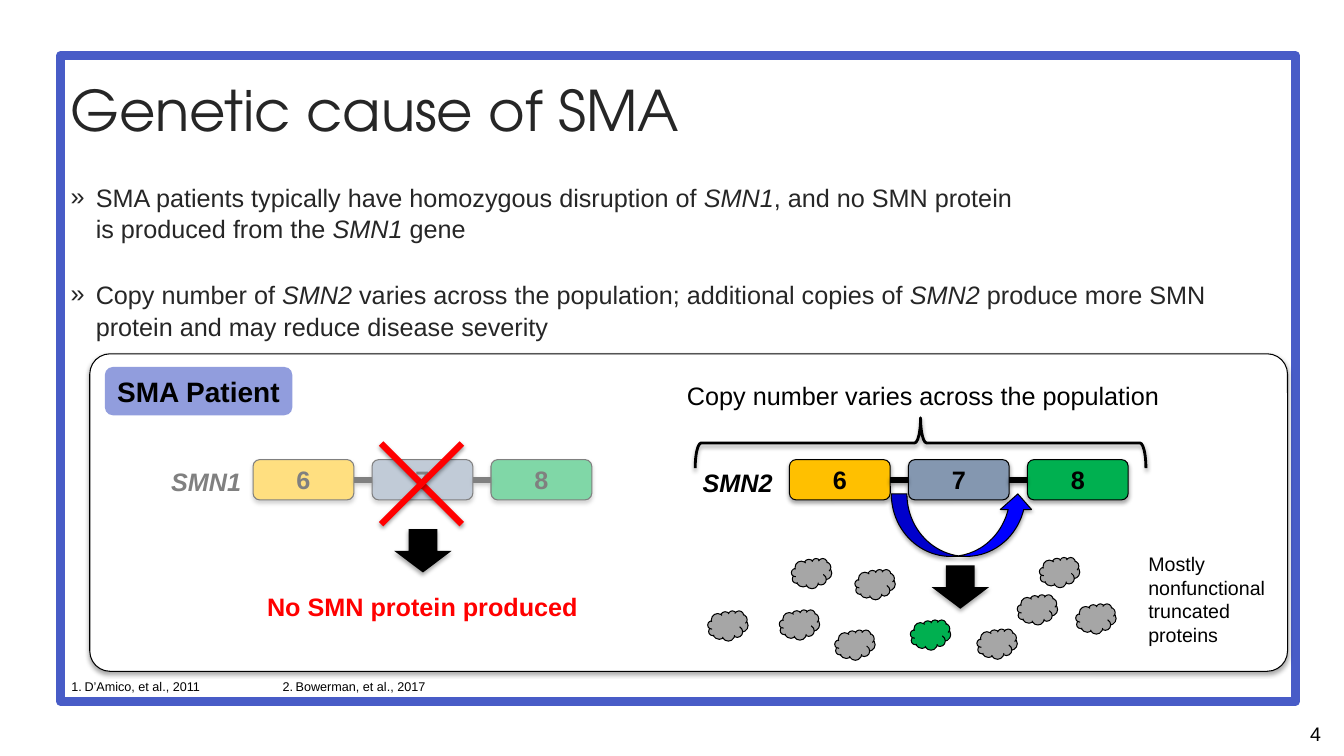
from dataclasses import dataclass

from pptx import Presentation
from pptx.dml.color import RGBColor
from pptx.enum.shapes import MSO_CONNECTOR, MSO_SHAPE as Preset
from pptx.enum.text import MSO_ANCHOR as Anchor, MSO_AUTO_SIZE as AutoSize, PP_ALIGN as Align
from pptx.oxml.ns import qn
from pptx.oxml.xmlchemy import OxmlElement
from pptx.util import Inches, Pt

TITLE = "Genetic cause of SMA"
# Asterisks enclose italic words.
BULLETS = [
    "SMA patients typically have homozygous disruption of *SMN1*, and no SMN protein \n"
    "is produced from the *SMN1* gene",
    "Copy number of *SMN2 *varies across the population; additional copies of *SMN2* "
    "produce more SMN protein and may reduce disease severity",
]
REFERENCES = ["D’Amico, et al., 2011", "Bowerman, et al., 2017"]
PAGE_NUMBER = "4"
PATIENT = "SMA Patient"
COPY_NUMBER = "Copy number varies across the population"
NO_PROTEIN = "No SMN protein produced"
TRUNCATED = "Mostly \nnonfunctional truncated proteins"
EXONS = [("6", "FFC000"), ("7", "8497B0"), ("8", "00B050")]
# Gene name, label position, left edge of the first exon
GENES = [("SMN1", (1.6, 4.58), 2.51), ("SMN2", (6.87, 4.59), 7.83)]
DOWN_ARROWS = [(3.91, 5.25), (9.24, 5.61)]
TRUNCATED_PROTEINS = [
    (7.02, 6.06), (8.48, 5.65), (10.09, 5.9), (10.31, 5.53), (9.69, 6.24),
    (10.67, 5.99), (7.73, 6.05), (8.28, 6.25), (7.85, 5.54),
]
FULL_PROTEIN = (9.03, 6.15)
EXON_TOP, EXON_WIDTH, EXON_HEIGHT, EXON_STEP = 4.56, 1, 0.4, 1.18
CROSS_LEFT, CROSS_TOP, CROSS_SIZE = 3.78, 4.4, 0.8


@dataclass(frozen=True)
class Theme:
    body_font: str = "Arial"
    title_font: str = "TeX Gyre Adventor"
    ink: str = "262626"
    black: str = "000000"
    white: str = "FFFFFF"
    frame: str = "485CC7"
    badge: str = "919DDD"
    alert: str = "FF0000"
    splice: str = "0000FF"
    truncated: str = "A6A6A6"
    full: str = "00B050"
    title_size: int = 40
    badge_size: int = 20
    text_size: int = 18
    small_size: int = 14
    reference_size: int = 9


THEME = Theme()


def color(code):
    return RGBColor.from_string(code)


def element(parent, tag, **attributes):
    child = OxmlElement(tag)
    for name, value in attributes.items():
        child.set(name, str(value))
    parent.append(child)
    return child


def style(paragraph, size=THEME.text_size, tint=THEME.black, font=THEME.body_font, bold=None):
    for span in paragraph.runs:
        span.font.name, span.font.size, span.font.bold = font, Pt(size), bold
        span.font.color.rgb = color(tint)


def add_shadow(item, alpha=35, distance=1.8):
    properties = item._element.spPr
    effects = properties.find(qn("a:effectLst"))
    if effects is None:
        effects = element(properties, "a:effectLst")
    outer = element(effects, "a:outerShdw", blurRad=Pt(3.1), dist=Pt(distance),
                    dir=90 * 60000, algn="ctr", rotWithShape=0)
    shade = element(outer, "a:srgbClr", val=THEME.black)
    element(shade, "a:alpha", val=alpha * 1000)


def add_shape(page, preset, at, fill=None, line=None, width=0.75, shadow=False, opacity=None):
    shape = page.shapes.add_shape(preset, *map(Inches, at))
    if fill:
        shape.fill.solid()
        shape.fill.fore_color.rgb = color(fill)
        if opacity:
            element(shape.fill._xPr.find(".//" + qn("a:srgbClr")), "a:alpha", val=opacity * 1000)
    else:
        shape.fill.background()
    if line:
        shape.line.color.rgb = color(line)
        shape.line.width = Pt(width)
    else:
        shape.line.fill.background()
    shape.shadow.inherit = False
    if shadow:
        add_shadow(shape)
    return shape


def add_text(page, at, text, wrap=False, align=Align.LEFT, **look):
    box = page.shapes.add_textbox(*map(Inches, at))
    box.text_frame.word_wrap = wrap
    box.text_frame.text = text.replace("\n", "\v")
    for para in box.text_frame.paragraphs:
        para.alignment = align
        style(para, **look)
    return box


def add_line(page, start, end, tint):
    line = page.shapes.add_connector(MSO_CONNECTOR.STRAIGHT, *map(Inches, start + end))
    line.line.color.rgb = color(tint)
    line.line.width = Pt(4.5)
    add_shadow(line, 38, 1.6)
    return line


def label_shape(shape, text, align, size=THEME.text_size):
    frame = shape.text_frame
    frame.word_wrap = False
    frame.vertical_anchor = Anchor.MIDDLE
    frame.text = text
    frame.paragraphs[0].alignment = align
    style(frame.paragraphs[0], size, bold=True)


def place(holder, at):
    holder.left, holder.top, holder.width, holder.height = map(Inches, at)
    holder.text_frame.auto_size = AutoSize.NONE


def hang(paragraph, indent):
    properties = paragraph._p.get_or_add_pPr()
    properties.set("marL", str(Inches(indent)))
    properties.set("indent", str(-Inches(indent)))
    return properties


def fill_placeholders(page):
    title, body = page.shapes.title, page.placeholders[1]
    place(title, (0.6, 0.36, 12.25, 1.45))
    title.text_frame.text = TITLE
    title.text_frame.vertical_anchor = Anchor.MIDDLE
    heading = title.text_frame.paragraphs[0]
    heading.alignment = Align.LEFT
    style(heading, THEME.title_size, THEME.ink, THEME.title_font)

    place(body, (0.6, 1.74, 12.25, 4.93))
    for index, bullet in enumerate(BULLETS):
        para = body.text_frame.add_paragraph() if index else body.text_frame.paragraphs[0]
        element(hang(para, 0.25), "a:buChar", char="»")
        para.space_before, para.space_after = Pt(18 if index else 0), Pt(6)
        para.line_spacing = 1.05
        for part, words in enumerate(bullet.split("*")):
            for row, piece in enumerate(words.split("\n")):
                if row:
                    para.add_line_break()
                span = para.add_run()
                span.text = piece
                span.font.italic = part % 2 == 1
        style(para, tint=THEME.ink)


def add_gene(page, name, label_at, left):
    label = add_text(page, (*label_at, 0.9, 0.4), name, bold=True)
    label.text_frame.paragraphs[0].runs[0].font.italic = True
    middle = EXON_TOP + EXON_HEIGHT / 2
    previous = None
    for index, (number, tint) in enumerate(EXONS):
        x = left + index * EXON_STEP
        exon = add_shape(page, Preset.ROUNDED_RECTANGLE, (x, EXON_TOP, EXON_WIDTH, EXON_HEIGHT),
                         tint, THEME.black, shadow=True)
        label_shape(exon, number, Align.CENTER)
        if previous:
            link = add_line(page, (x - EXON_STEP + EXON_WIDTH, middle), (x, middle), THEME.black)
            link.begin_connect(previous, 3)
            link.end_connect(exon, 1)
        previous = exon


def add_diagram(page):
    panel = add_shape(page, Preset.ROUNDED_RECTANGLE, (0.89, 3.51, 11.88, 3.15),
                      THEME.white, THEME.black, shadow=True)
    panel.adjustments[0] = 0.064
    badge = add_shape(page, Preset.ROUNDED_RECTANGLE, (1.04, 3.64, 1.86, 0.48), THEME.badge)
    label_shape(badge, PATIENT, Align.LEFT, THEME.badge_size)
    add_text(page, (2.55, 5.82, 3.32, 0.4), NO_PROTEIN, tint=THEME.alert, bold=True)
    add_text(page, (6.69, 3.72, 4.93, 0.4), COPY_NUMBER, align=Align.CENTER)
    add_text(page, (11.29, 5.43, 1.42, 1.04), TRUNCATED, wrap=True, size=THEME.small_size)
    proteins = [(at, THEME.truncated) for at in TRUNCATED_PROTEINS] + [(FULL_PROTEIN, THEME.full)]
    for at, tint in proteins:
        add_shape(page, Preset.CLOUD, (*at, 0.4, 0.3), tint, THEME.black)
    brace = add_shape(page, Preset.LEFT_BRACE, (8.88, 2.16, 0.5, 4.47), None, THEME.black, 2, True)
    brace.rotation = 90
    brace.adjustments[0] = 0.118
    for gene in GENES:
        add_gene(page, *gene)
    add_shape(page, Preset.CURVED_UP_ARROW, (8.84, 4.9, 1.41, 0.62),
              THEME.splice, THEME.black, shadow=True)
    for at in DOWN_ARROWS:
        add_shape(page, Preset.DOWN_ARROW, (*at, 0.57, 0.43), THEME.black, shadow=True)
    add_shape(page, Preset.RECTANGLE, (1.6, 4.46, 4.51, 0.64), THEME.white, opacity=50)
    right, bottom = CROSS_LEFT + CROSS_SIZE, CROSS_TOP + CROSS_SIZE
    add_line(page, (CROSS_LEFT, CROSS_TOP), (right, bottom), THEME.alert)
    add_line(page, (right, CROSS_TOP), (CROSS_LEFT, bottom), THEME.alert)


def add_references(page):
    box = add_text(page, (0.61, 6.69, 6.48, 0.25), "\r".join(REFERENCES).replace("\r", "\n"), wrap=True)
    box.text_frame.text = "\n".join(REFERENCES)
    box.text_frame.auto_size = AutoSize.SHAPE_TO_FIT_TEXT
    box.text_frame._txBody.bodyPr.set("numCol", "3")
    for para in box.text_frame.paragraphs:
        element(hang(para, 0.13), "a:buFont", typeface=THEME.body_font)
        element(para._p.pPr, "a:buAutoNum", type="arabicPeriod")
        style(para, THEME.reference_size)


def main():
    deck = Presentation()
    deck.slide_width, deck.slide_height = Inches(13.33), Inches(7.5)
    page = deck.slides.add_slide(deck.slide_layouts[1])
    frame = add_shape(page, Preset.RECTANGLE, (0.6, 0.55, 12.25, 6.41),
                      THEME.white, THEME.frame, 6, opacity=26)
    page.shapes._spTree.insert(2, frame._element)
    fill_placeholders(page)
    add_diagram(page)
    add_references(page)
    add_text(page, (10.13, 7.11, 3.07, 0.24), PAGE_NUMBER, wrap=True,
             align=Align.RIGHT, size=THEME.small_size)
    deck.save("out.pptx")


if __name__ == "__main__":
    main()
